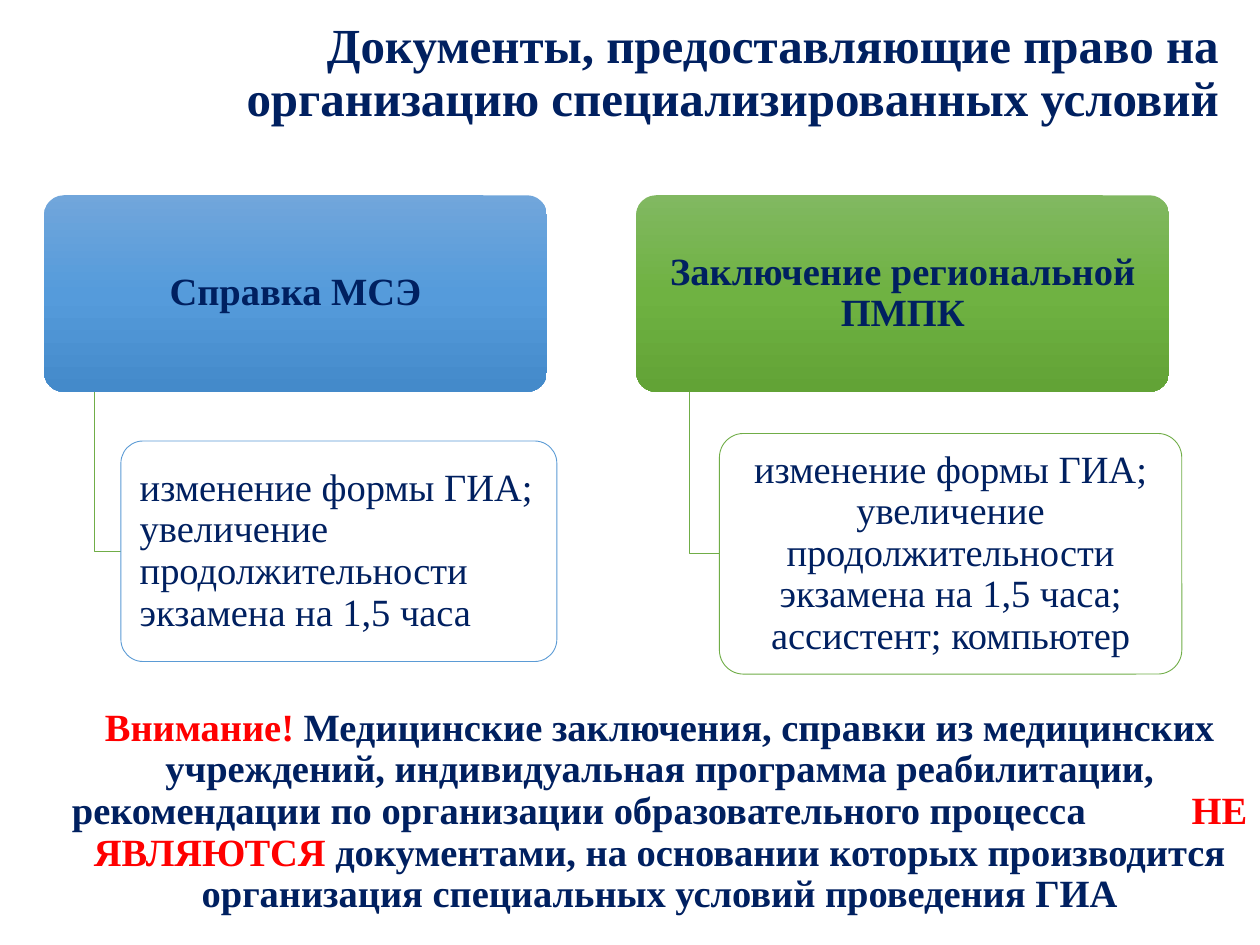
import copy

import pptx
import pptx.dml.color
import pptx.enum.shapes
import pptx.enum.text
import pptx.oxml.ns
import pptx.util
from pptx.util import Inches

ALIGN = pptx.enum.text.PP_ALIGN
NAVY, RED, GREEN, BLUE = "002060", "FF0000", "70AD47", "5B9BD5"


def rgb(value):
    return pptx.dml.color.RGBColor.from_string(value)


class Deck:
    font = "Times New Roman"

    def __init__(self, prs):
        self.s = prs.slides.add_slide(prs.slide_layouts[6])
        fill = self.s.background.fill
        fill.solid()
        fill.fore_color.rgb = rgb("FFFFFF")

    def fill_text(self, tf, runs, size, align, bold):
        """Fill a frame with one paragraph made of (text, colour) runs."""
        tf.word_wrap = True
        tf.vertical_anchor = pptx.enum.text.MSO_ANCHOR.MIDDLE
        p = tf.paragraphs[0]
        p.alignment = align
        p.line_spacing = 0.9
        for text, color in runs:
            r = p.add_run()
            r.text = text
            r.font.name = self.font
            r.font.size = pptx.util.Pt(size)
            r.font.bold = bold
            r.font.color.rgb = rgb(color)
        return p

    def text(self, box, runs, size, align):
        tb = self.s.shapes.add_textbox(*map(Inches, box))
        return self.fill_text(tb.text_frame, runs, size, align, True)

    def card(self, box, text, align=ALIGN.CENTER, bold=False, line=None, stops=None):
        """Rounded box: a vertical three-colour gradient, or white with an outline."""
        sp = self.s.shapes.add_shape(
            pptx.enum.shapes.MSO_SHAPE.ROUNDED_RECTANGLE, *map(Inches, box))
        sp.adjustments[0] = 0.1
        sp.shadow.inherit = False
        if stops:
            self.gradient(sp, stops)
        else:
            sp.fill.solid()
            sp.fill.fore_color.rgb = rgb("FFFFFF")
        if line:
            sp.line.color.rgb = rgb(line)
            sp.line.width = pptx.util.Pt(0.5)
        else:
            sp.line.fill.background()
        tf = sp.text_frame
        tf.margin_left = tf.margin_right = Inches(0.1)
        tf.margin_top = tf.margin_bottom = Inches(0.07)
        self.fill_text(tf, [(text, NAVY)], 22, align, bold)

    def gradient(self, sp, colors):
        sp.fill.gradient()
        sp.fill.gradient_angle = 270
        gs_list = sp._element.spPr.find(".//" + pptx.oxml.ns.qn("a:gsLst"))
        gs_list.insert(1, copy.deepcopy(gs_list[0]))
        for i, (stop, color) in enumerate(zip(sp.fill.gradient_stops, colors)):
            stop.position = i / 2
            stop.color.rgb = rgb(color)

    def elbow(self, x, top, right, bottom):
        """Open line going down, then right."""
        fb = self.s.shapes.build_freeform(Inches(x), Inches(top))
        fb.add_line_segments([(Inches(x), Inches(bottom)),
                              (Inches(right), Inches(bottom))], close=False)
        sp = fb.convert_to_shape()
        sp.shadow.inherit = False
        sp.fill.background()
        sp.line.color.rgb = rgb(GREEN)
        sp.line.width = pptx.util.Pt(0.5)


def main():
    prs = pptx.Presentation()
    prs.slide_width, prs.slide_height = Inches(10), Inches(7.5)
    deck = Deck(prs)

    deck.text((0.24, 0.02, 9.53, 1.13),
              [("Документы, предоставляющие право на "
                "организацию специализированных условий", NAVY)], 28, ALIGN.RIGHT)

    top, height = 1.55, 1.56
    rights = "изменение формы ГИА; увеличение продолжительности экзамена на 1,5 часа"
    branches = [
        (0.35, 3.99, "Справка МСЭ", ("71A6DB", "559BDB", "448ACA"), 0.75,
         (0.96, 3.5, 3.46, 1.75), rights, ALIGN.LEFT, BLUE),
        (5.05, 4.23, "Заключение региональной ПМПК", ("81B861", "6FB242", "62A336"), 5.47,
         (5.71, 3.44, 3.67, 1.91), rights + "; ассистент; компьютер", ALIGN.CENTER, GREEN),
    ]
    for left, width, heading, stops, stem, box, text, align, line in branches:
        deck.card((left, top, width, height), heading, bold=True, stops=stops)
        deck.elbow(stem, top + height, box[0], box[1] + box[3] / 2)
        deck.card(box, text, align, line=line)

    p = deck.text((0.47, 5.72, 9.53, 1.45), [
        ("Внимание! ", RED),
        ("Медицинские заключения, справки из медицинских учреждений, "
         "индивидуальная программа реабилитации, рекомендации по организации "
         "образовательного процесса", NAVY),
        (" ", NAVY),
        ("НЕ ЯВЛЯЮТСЯ ", RED),
        ("документами, на основании которых производится организация "
         "специальных условий проведения ГИА", NAVY),
    ], 22, ALIGN.CENTER)
    # Widen the single space before the red words by 55 pt
    p.runs[2].font._element.set("spc", "5500")

    prs.save("out.pptx")


if __name__ == "__main__":
    main()
